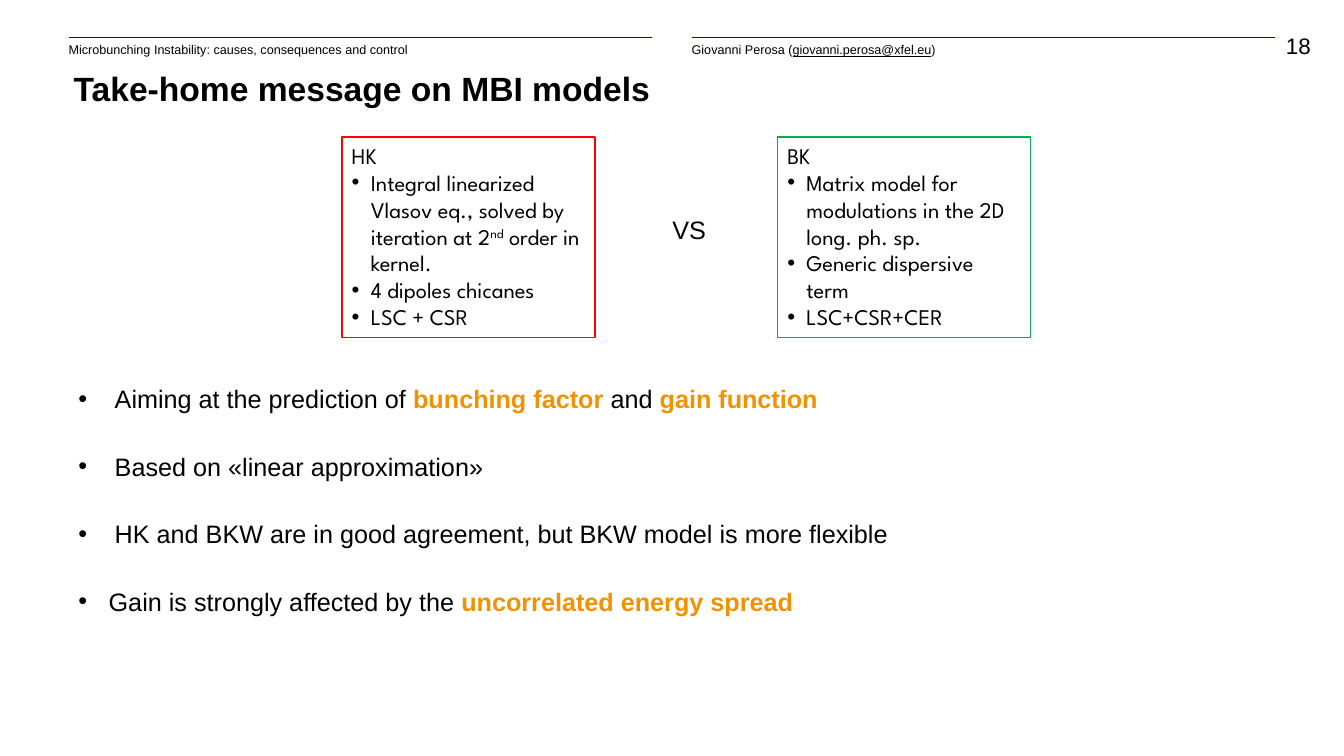
from pptx import Presentation
from pptx.dml.color import RGBColor
from pptx.enum.shapes import MSO_CONNECTOR, MSO_SHAPE
from pptx.enum.text import MSO_ANCHOR, MSO_AUTO_SIZE, PP_ALIGN
from pptx.util import Inches, Pt
from lxml import etree

LINE, RECT = MSO_CONNECTOR.STRAIGHT, MSO_SHAPE.RECTANGLE
TOP, FIXED = MSO_ANCHOR.TOP, MSO_AUTO_SIZE.NONE
LEFT, RIGHT = PP_ALIGN.LEFT, PP_ALIGN.RIGHT
A = "{http://schemas.openxmlformats.org/drawingml/2006/main}"


class Theme:
    sans, round = "Arial", "League Spartan"
    black, white = RGBColor(0, 0, 0), RGBColor(255, 255, 255)
    navy, orange = RGBColor(0x0D, 0x15, 0x46), RGBColor(0xF3, 0x92, 0x00)
    red, green = RGBColor(255, 0, 0), RGBColor(0x00, 0xB0, 0x50)
    small, label, body, title = Pt(9), Pt(16), Pt(18), Pt(24)


def write(para, runs, size, face=Theme.sans, indent=0):
    """Add (text, style) runs; an indent makes the paragraph a bullet."""
    para.alignment = LEFT
    if indent:
        props = para._p.get_or_add_pPr()
        props.set("marL", str(Inches(indent)))
        props.set("indent", str(-Inches(indent)))
        etree.SubElement(props, A + "buFont", typeface="Arial")
        etree.SubElement(props, A + "buChar", char="•")
    for text, style in runs:
        run = para.add_run()
        run.text = text
        font = run.font
        font.name, font.size = face, size
        font.color.rgb = Theme.orange if style == "key" else Theme.black
        font.bold = style in ("key", "title")
        font.underline = style == "mail"
        if style == "super":
            run._r.get_or_add_rPr().set("baseline", "30000")


def add_box(x, y, w, h, pad=True):
    """Add a text box and return its text frame."""
    frame = slide.shapes.add_textbox(
        Inches(x), Inches(y), Inches(w), Inches(h)).text_frame
    frame.word_wrap = True
    if not pad:
        frame.margin_left = frame.margin_right = 0
        frame.margin_top = frame.margin_bottom = 0
    return frame


deck = Presentation()
deck.slide_width, deck.slide_height = Inches(13.33), Inches(7.5)
slide = deck.slides.add_slide(deck.slide_layouts[5])

# Header: two ruled columns and the page number
heads = [
    (0.68, [("Microbunching Instability: causes, consequences and control", "")]),
    (6.86, [("Giovanni Perosa (", ""), ("giovanni.perosa@xfel.eu", "mail"),
            (")", "")]),
]
for x, runs in heads:
    rule = slide.shapes.add_connector(
        LINE, Inches(x), Inches(0.37), Inches(x + 5.79), Inches(0.37))
    rule.line.color.rgb, rule.line.width = Theme.navy, Pt(0.5)
    etree.SubElement(rule._element.spPr, A + "effectLst")
    frame = add_box(x, 0.42, 5.79, 0.24, pad=False)
    write(frame.paragraphs[0], runs, Theme.small)

page = add_box(12.44, 0.32, 0.56, 0.32, pad=False).paragraphs[0]
write(page, [("18", "")], Theme.label)
page.alignment = RIGHT

# Title
title = slide.shapes.title
title.left, title.top = Inches(0.63), Inches(0.62)
title.width, title.height = Inches(6.04), Inches(0.5)
title.text_frame.auto_size = FIXED
title.text_frame.vertical_anchor = TOP
write(title.text_frame.paragraphs[0],
      [("Take-home message on MBI models", "title")], Theme.title)

# The two models side by side
models = [
    (3.39, Theme.red, "HK", [
        [("Integral linearized Vlasov eq., solved by iteration at 2", ""),
         ("nd", "super"), (" order in kernel.", "")],
        [("4 dipoles chicanes", "")],
        [("LSC + CSR", "")]]),
    (7.71, Theme.green, "BK", [
        [("Matrix model for modulations in the 2D long. ph. sp.", "")],
        [("Generic dispersive term", "")],
        [("LSC+CSR+CER", "")]]),
]
for x, color, name, points in models:
    card = slide.shapes.add_shape(
        RECT, Inches(x), Inches(1.36), Inches(2.51), Inches(1.99))
    card.shadow.inherit = False
    card.fill.solid()
    card.fill.fore_color.rgb = Theme.white
    card.line.color.rgb, card.line.width = color, Pt(1)
    frame = card.text_frame
    frame.word_wrap, frame.vertical_anchor = True, TOP
    write(frame.paragraphs[0], [(name, "")], Theme.label, Theme.round)
    for runs in points:
        write(frame.add_paragraph(), runs, Theme.label, Theme.round, 0.19)

versus = add_box(6.57, 2.04, 0.6, 0.35).paragraphs[0]
write(versus, [("VS", "")], Theme.body)
versus.line_spacing = 1.12

# Main messages
notes = [
    (0.36, [("Aiming at the prediction of ", ""), ("bunching factor ", "key"),
            ("and ", ""), ("gain function", "key")]),
    (0.36, [("Based on «linear approximation»", "")]),
    (0.36, [("HK and BKW are in good agreement, but BKW model is more flexible",
             "")]),
    (0.3, [("Gain is strongly affected by the ", ""),
           ("uncorrelated energy spread", "key")]),
]
frame = add_box(0.68, 3.72, 9.54, 2.79)
for i, (indent, runs) in enumerate(notes):
    para = frame.add_paragraph() if i else frame.paragraphs[0]
    write(para, runs, Theme.body, indent=indent)
    para.line_spacing = 1.12
    if i:
        para.space_before = Pt(24)

deck.save("out.pptx")
